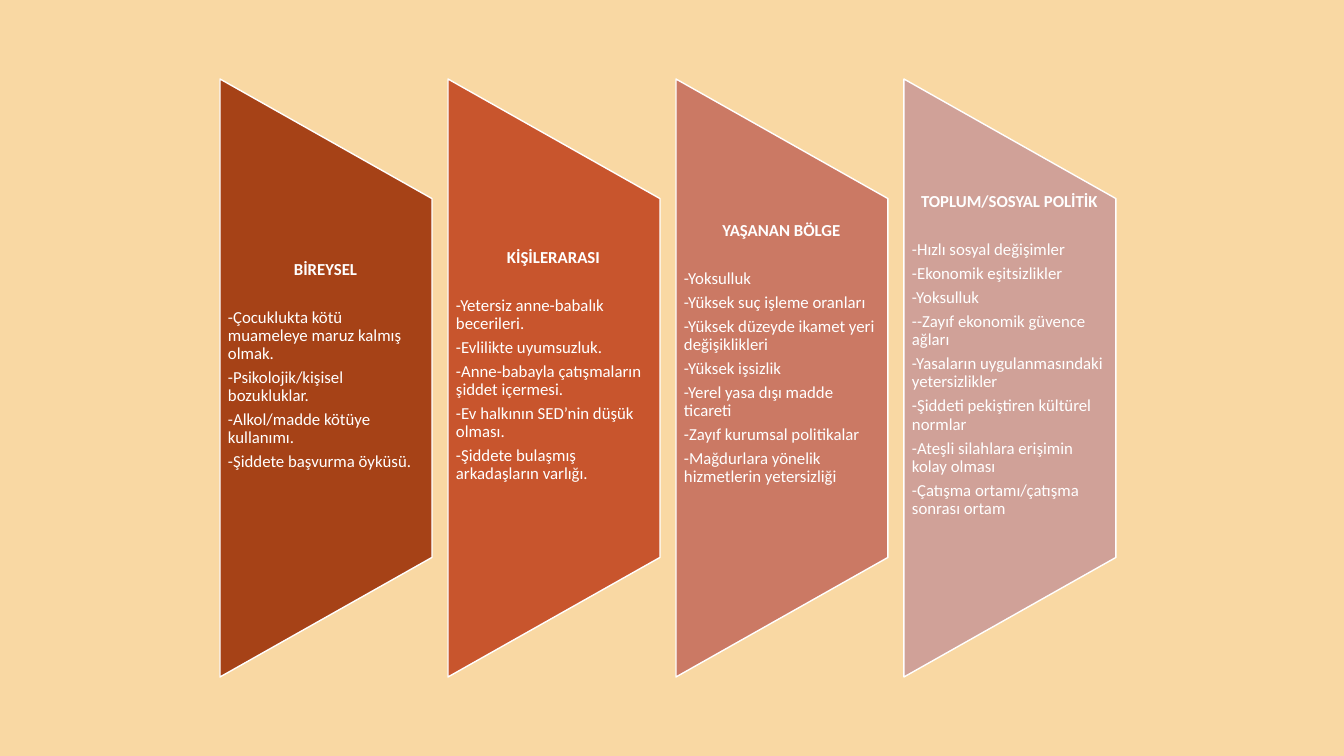
from pptx import Presentation
from pptx.dml.color import RGBColor
from pptx.enum.shapes import MSO_SHAPE
from pptx.enum.text import MSO_ANCHOR, PP_ALIGN
from pptx.util import Emu, Pt

TRAPEZOID = MSO_SHAPE.FLOWCHART_MANUAL_OPERATION
MIDDLE = MSO_ANCHOR.MIDDLE
CENTER, LEFT = PP_ALIGN.CENTER, PP_ALIGN.LEFT

SLIDE_WIDTH, SLIDE_HEIGHT = 1344, 756
FIRST_LEFT, COLUMN_STEP = 220, 228
PANEL_WIDTH, PANEL_HEIGHT = 212, 598
TEXT_HEIGHT = 359

RISK_LEVELS = [
    ("A64217", 24, "BİREYSEL", [
        "-Çocuklukta kötü muameleye maruz kalmış olmak.",
        "-Psikolojik/kişisel bozukluklar.",
        "-Alkol/madde kötüye kullanımı.",
        "-Şiddete başvurma öyküsü.",
    ]),
    ("C8552D", 24, "KİŞİLERARASI", [
        "-Yetersiz anne-babalık becerileri.",
        "-Evlilikte uyumsuzluk.",
        "-Anne-babayla çatışmaların şiddet içermesi.",
        "-Ev halkının SED’nin düşük olması.",
        "-Şiddete bulaşmış arkadaşların varlığı.",
    ]),
    ("CB7964", 48, "YAŞANAN BÖLGE", [
        "-Yoksulluk",
        "-Yüksek suç işleme oranları",
        "-Yüksek düzeyde ikamet yeri değişiklikleri",
        "-Yüksek işsizlik",
        "-Yerel yasa dışı madde ticareti",
        "-Zayıf kurumsal politikalar",
        "-Mağdurlara yönelik hizmetlerin yetersizliği",
    ]),
    ("D0A198", 45, "TOPLUM/SOSYAL POLİTİK", [
        "-Hızlı sosyal değişimler",
        "-Ekonomik eşitsizlikler",
        "-Yoksulluk",
        "--Zayıf ekonomik güvence ağları",
        "-Yasaların uygulanmasındaki yetersizlikler",
        "-Şiddeti pekiştiren kültürel normlar",
        "-Ateşli silahlara erişimin kolay olması",
        "-Çatışma ortamı/çatışma sonrası ortam",
    ]),
]


def px(length):
    """Turn whole pixels into EMU."""
    return Emu(round(length * 914400 / 100.8))


def color(value):
    """Turn a hex string into a colour."""
    return RGBColor.from_string(value)


def apply(target, values):
    """Set each attribute of the target from a dict."""
    for name, value in values.items():
        setattr(target, name, value)


class SlideBuilder:
    """Hold the style and the slide that is being built."""

    font = {"name": "Calibri", "size": Pt(12)}
    text_color = "FFFFFF"
    heading = {"alignment": CENTER, "line_spacing": 0.9, "space_after": Pt(21.4)}
    item = {"alignment": LEFT, "line_spacing": 0.9, "space_after": Pt(4.2)}

    def __init__(self, slide, background):
        """Keep the slide and paint its background."""
        self.slide = slide
        slide.background.fill.solid()
        slide.background.fill.fore_color.rgb = color(background)

    def panel(self, left, fill):
        """Draw an upright trapezoid that narrows to the right."""
        shape = self.slide.shapes.add_shape(
            TRAPEZOID,
            px(left + (PANEL_WIDTH - PANEL_HEIGHT) / 2),
            px((SLIDE_HEIGHT - PANEL_WIDTH) / 2),
            px(PANEL_HEIGHT), px(PANEL_WIDTH))
        shape.rotation = 270
        shape.shadow.inherit = False
        shape.fill.solid()
        shape.fill.fore_color.rgb = color(fill)
        shape.line.color.rgb = color(self.text_color)
        shape.line.width = Pt(1)

    def paragraph(self, paragraph, text, layout, bold):
        """Write one formatted paragraph."""
        apply(paragraph, layout)
        run = paragraph.add_run()
        run.text = text
        apply(run.font, {**self.font, "bold": bold})
        run.font.color.rgb = color(self.text_color)

    def factors(self, left, bottom_margin, title, items):
        """Write a heading and its list over a panel."""
        box = self.slide.shapes.add_textbox(
            px(left), px((SLIDE_HEIGHT - TEXT_HEIGHT) / 2),
            px(PANEL_WIDTH), px(TEXT_HEIGHT))
        frame = box.text_frame
        apply(frame, {
            "word_wrap": True, "vertical_anchor": MIDDLE,
            "margin_left": px(8), "margin_right": px(9),
            "margin_top": 0, "margin_bottom": px(bottom_margin)})
        self.paragraph(frame.paragraphs[0], title, self.heading, True)
        for text in items:
            self.paragraph(frame.add_paragraph(), text, self.item, False)


def main():
    """Build and save the slide."""
    presentation = Presentation()
    apply(presentation, {"slide_width": px(SLIDE_WIDTH),
                         "slide_height": px(SLIDE_HEIGHT)})
    slide = presentation.slides.add_slide(presentation.slide_layouts[6])
    builder = SlideBuilder(slide, "F9D8A3")
    for index, (fill, bottom_margin, title, items) in enumerate(RISK_LEVELS):
        left = FIRST_LEFT + index * COLUMN_STEP
        builder.panel(left, fill)
        builder.factors(left, bottom_margin, title, items)
    presentation.save("out.pptx")


if __name__ == "__main__":
    main()
